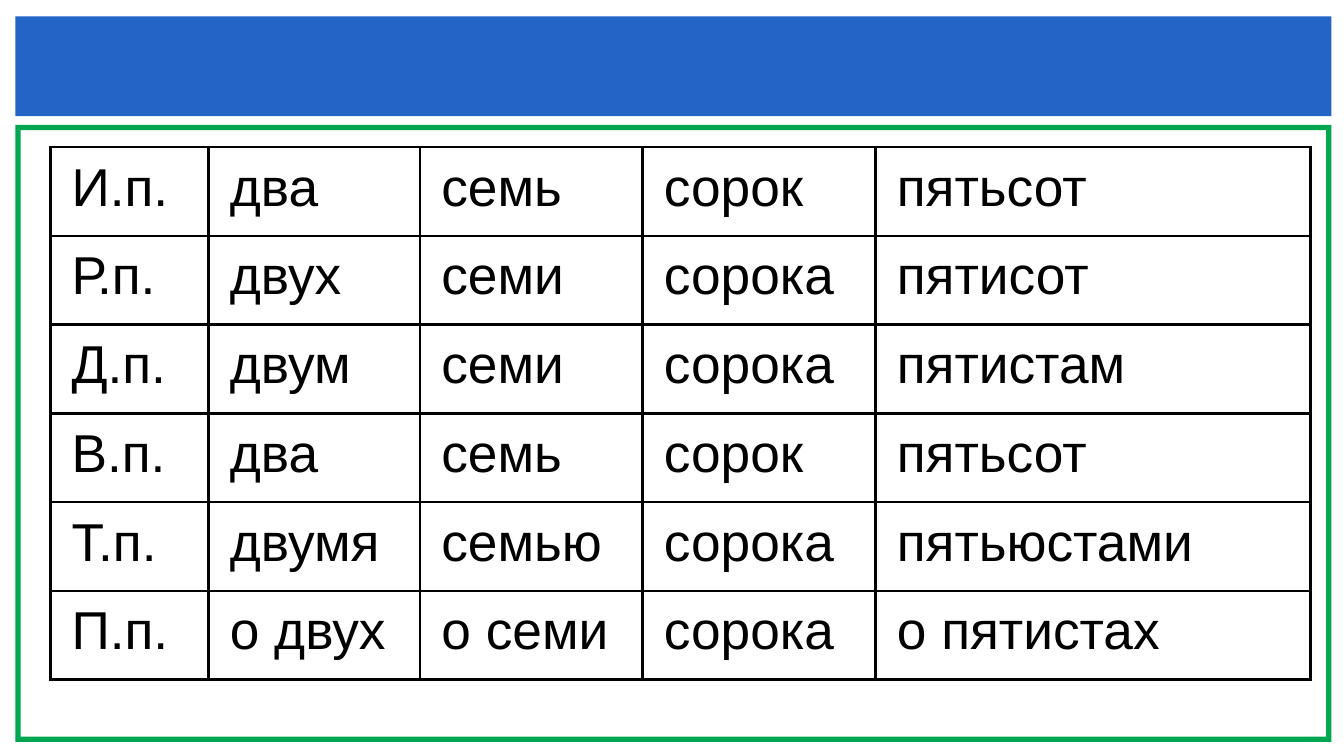
from dataclasses import dataclass

from lxml import etree
from pptx import Presentation
from pptx.dml.color import RGBColor
from pptx.enum import shapes
from pptx.oxml import ns
from pptx.slide import Slide
from pptx.table import _Cell
from pptx.util import Pt

COLOURS = {"band": "2365C7", "frame": "00A650", "ink": "000000"}
FONT = "Arial"
FRAME_THICKNESS = 1.75
ROW_HEIGHT = 30
COLUMN_WIDTHS = [53.5, 71.5, 75.25, 78.75, 147]
DECLENSIONS = [
    ["И.п.", "два", "семь", "сорок", "пятьсот"],
    ["Р.п.", "двух", "семи", "сорока", "пятисот"],
    ["Д.п.", "двум", "семи", "сорока", "пятистам"],
    ["В.п.", "два", "семь", "сорок", "пятьсот"],
    ["Т.п.", "двумя", "семью", "сорока", "пятьюстами"],
    ["П.п.", "о двух", "о семи", "сорока", "о пятистах"],
]


@dataclass
class Panel:
    kind: shapes.MSO_SHAPE
    left: float
    top: float
    width: float
    height: float
    colour: str


PANELS = [
    Panel(shapes.MSO_SHAPE.FRAME, 5.25, 42.25, 444.75, 208.5, "frame"),
    Panel(shapes.MSO_SHAPE.RECTANGLE, 5.25, 5.5, 444.75, 33.75, "band"),
]


def add_panel(slide: Slide, panel: Panel) -> None:
    shape = slide.shapes.add_shape(
        panel.kind, Pt(panel.left), Pt(panel.top), Pt(panel.width), Pt(panel.height)
    )
    shape.shadow.inherit = False
    shape.fill.solid()
    shape.fill.fore_color.rgb = RGBColor.from_string(COLOURS[panel.colour])
    shape.line.fill.background()
    if panel.kind == shapes.MSO_SHAPE.FRAME:
        shape.adjustments[0] = FRAME_THICKNESS / min(panel.width, panel.height)


def add_borders(cell: _Cell, width: float) -> None:
    properties = cell._tc.get_or_add_tcPr()
    for index, side in enumerate(("lnL", "lnR", "lnT", "lnB")):
        border = etree.Element(ns.qn(f"a:{side}"), w=str(Pt(width)))
        fill = etree.SubElement(border, ns.qn("a:solidFill"))
        etree.SubElement(fill, ns.qn("a:srgbClr"), val=COLOURS["ink"])
        properties.insert(index, border)


def format_cell(cell: _Cell, wording: str) -> None:
    cell.text_frame.text = wording
    font = cell.text_frame.paragraphs[0].runs[0].font
    font.name = FONT
    font.size = Pt(18)
    font.color.rgb = RGBColor.from_string(COLOURS["ink"])
    cell.fill.background()
    add_borders(cell, 1)


def add_declension_table(slide: Slide) -> None:
    table = slide.shapes.add_table(
        len(DECLENSIONS), len(COLUMN_WIDTHS), Pt(17), Pt(49.75),
        Pt(sum(COLUMN_WIDTHS)), Pt(ROW_HEIGHT * len(DECLENSIONS)),
    ).table
    table.first_row = False
    table.horz_banding = False
    for column, width in zip(table.columns, COLUMN_WIDTHS):
        column.width = Pt(width)
    for row, forms in zip(table.rows, DECLENSIONS):
        row.height = Pt(ROW_HEIGHT)
        for cell, wording in zip(row.cells, forms):
            format_cell(cell, wording)


def main() -> None:
    presentation = Presentation()
    presentation.slide_width = Pt(454.25)
    presentation.slide_height = Pt(255.5)
    slide = presentation.slides.add_slide(presentation.slide_layouts[6])
    for panel in PANELS:
        add_panel(slide, panel)
    add_declension_table(slide)
    presentation.save("out.pptx")


if __name__ == "__main__":
    main()
